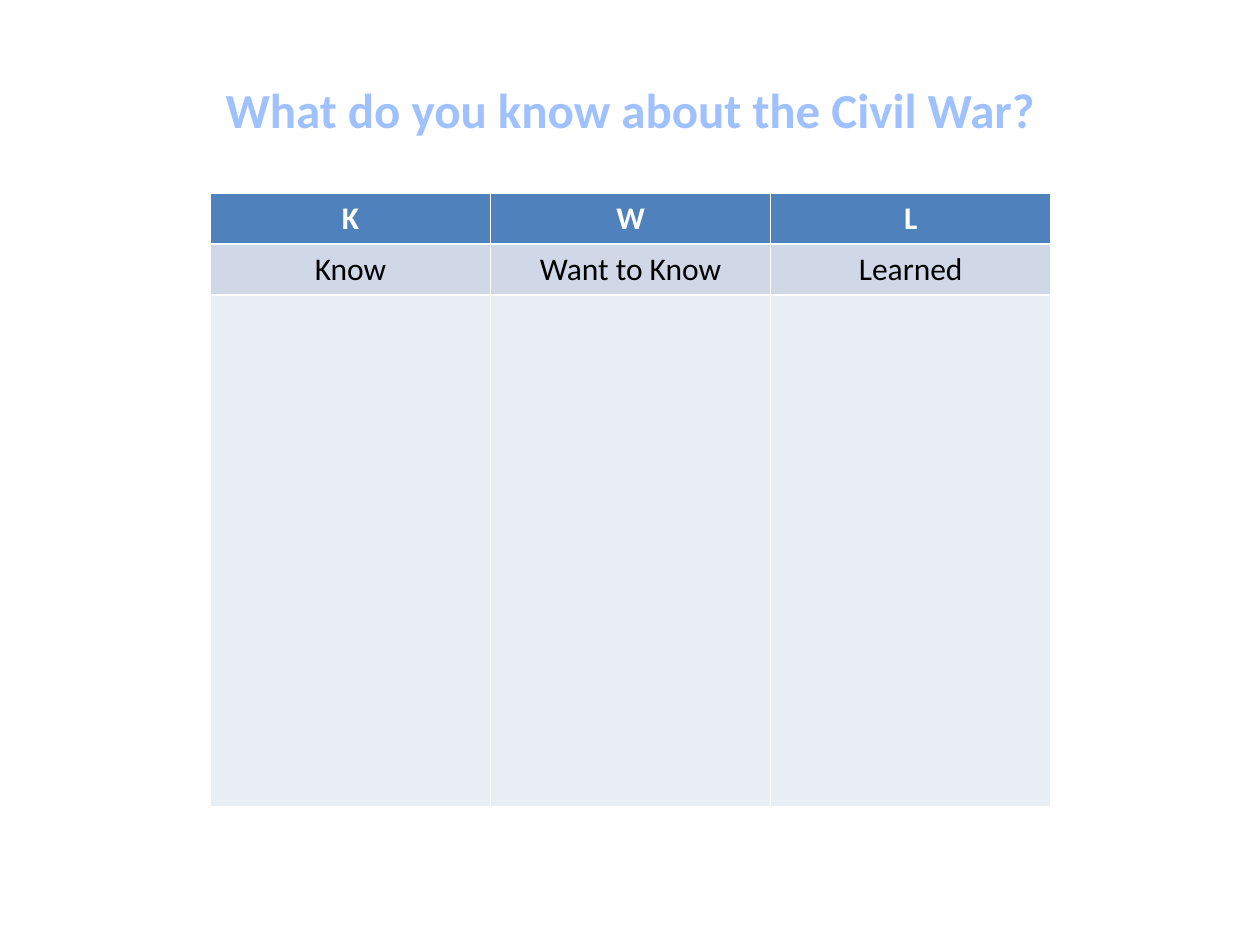
"""Build a K-W-L chart slide about the Civil War."""
from pptx import Presentation
from pptx.dml.color import RGBColor
from pptx.enum import text as t
from pptx.util import Inches, Pt

TITLE = "What do you know about the Civil War?"
ROWS = [
    {"labels": ["K", "W", "L"], "height": 0.4, "fill": "4F81BD", "color": "FFFFFF", "bold": True},
    {"labels": ["Know", "Want to Know", "Learned"], "height": 0.4, "fill": "D0D8E8", "color": "000000", "bold": False},
    {"labels": ["", "", ""], "height": 4.06, "fill": "E9EDF4", "color": "000000", "bold": False},
]
TABLE_LEFT, TABLE_TOP, TABLE_WIDTH = 1.67, 1.53, 6.67


def rgb(value):
    return RGBColor.from_string(value)


def write(frame, words, size=18, color="000000", bold=False):
    para = frame.paragraphs[0]
    para.alignment = t.PP_ALIGN.CENTER
    para.font.size = Pt(size)
    if words:
        span = para.add_run()
        span.text = words
        span.font.name = "Calibri"
        span.font.size = Pt(size)
        span.font.bold = bold
        span.font.color.rgb = rgb(color)


def add_title(page):
    box = page.shapes.add_textbox(Inches(1.65), Inches(0.58), Inches(6.7), Inches(0.57))
    box.text_frame.word_wrap = False
    box.text_frame.auto_size = t.MSO_AUTO_SIZE.SHAPE_TO_FIT_TEXT
    write(box.text_frame, TITLE, size=28, color="A0C1FF", bold=True)


def add_kwl_table(page):
    columns = len(ROWS[0]["labels"])
    height = sum(row["height"] for row in ROWS)
    table = page.shapes.add_table(
        len(ROWS), columns, Inches(TABLE_LEFT), Inches(TABLE_TOP),
        Inches(TABLE_WIDTH), Inches(height)).table
    for column in table.columns:
        column.width = Inches(TABLE_WIDTH / columns)
    for index, row in enumerate(ROWS):
        table.rows[index].height = Inches(row["height"])
        for cell, label in zip(table.rows[index].cells, row["labels"]):
            cell.fill.solid()
            cell.fill.fore_color.rgb = rgb(row["fill"])
            write(cell.text_frame, label, color=row["color"], bold=row["bold"])


def main():
    deck = Presentation()
    deck.slide_width, deck.slide_height = Inches(10), Inches(7.5)
    page = deck.slides.add_slide(deck.slide_layouts[6])
    add_kwl_table(page)
    add_title(page)
    deck.save("out.pptx")


if __name__ == "__main__":
    main()
